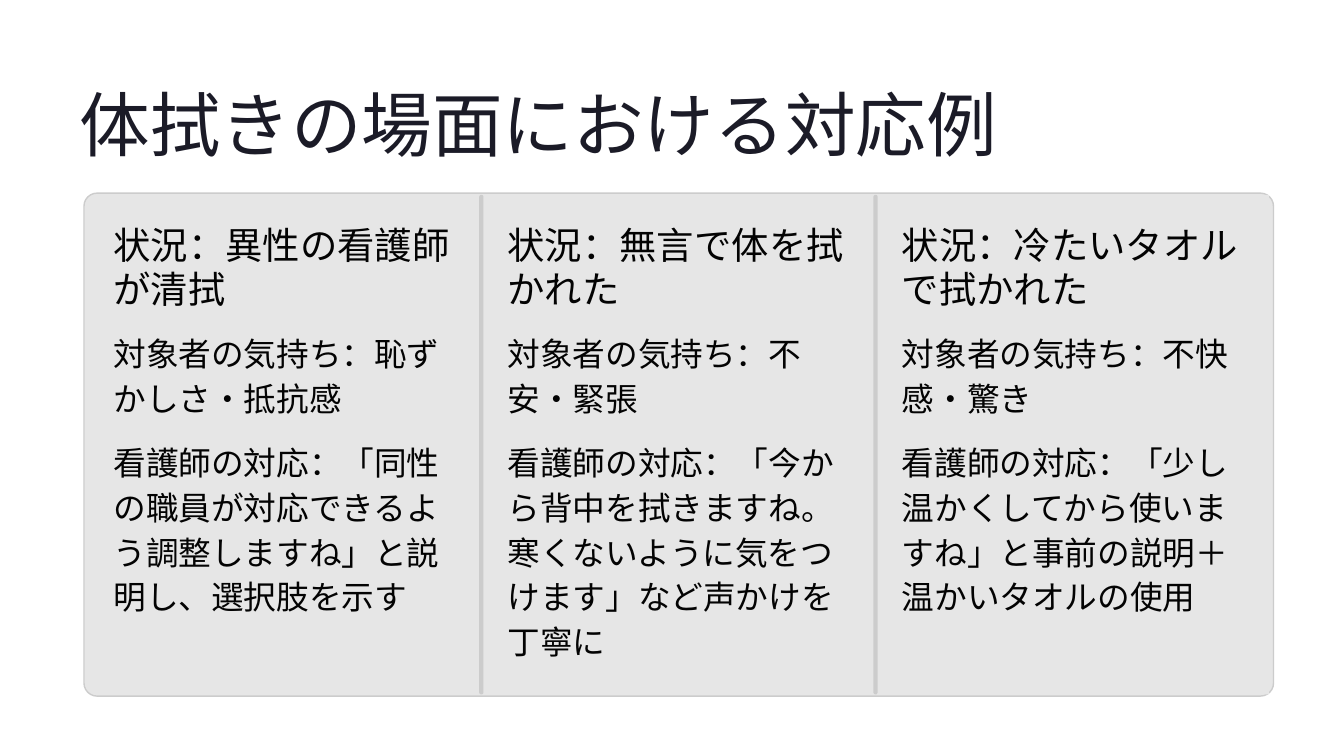
from dataclasses import dataclass

from pptx import Presentation
from pptx.dml.color import RGBColor
from pptx.enum.shapes import MSO_SHAPE
from pptx.enum.text import PP_ALIGN
from pptx.util import Cm, Pt

RECTANGLE = MSO_SHAPE.RECTANGLE
ROUNDED = MSO_SHAPE.ROUNDED_RECTANGLE
LEFT = PP_ALIGN.LEFT


@dataclass(frozen=True)
class Theme:
    title_color: RGBColor = RGBColor(0x1B, 0x1B, 0x27)
    text_color: RGBColor = RGBColor(0x03, 0x03, 0x03)
    card_color: RGBColor = RGBColor(0xE6, 0xE6, 0xE6)
    divider_color: RGBColor = RGBColor(0xCC, 0xCC, 0xCC)
    heading_font: str = "Inter"
    body_font: str = "Lato"
    title_size: Pt = Pt(60.5)
    heading_size: Pt = Pt(32)
    body_size: Pt = Pt(28)
    title_spacing: Pt = Pt(75.5)
    heading_spacing: Pt = Pt(37.5)
    body_spacing: Pt = Pt(38.5)


THEME = Theme()
TITLE_STYLE = {
    "font": {"name": THEME.heading_font, "size": THEME.title_size},
    "color": THEME.title_color,
    "paragraph": {"line_spacing": THEME.title_spacing, "alignment": LEFT},
}
HEADING_STYLE = {
    "font": {"name": THEME.heading_font, "size": THEME.heading_size},
    "color": THEME.text_color,
    "paragraph": {"line_spacing": THEME.heading_spacing, "alignment": LEFT},
}
BODY_STYLE = {
    "font": {"name": THEME.body_font, "size": THEME.body_size},
    "color": THEME.text_color,
    "paragraph": {"line_spacing": THEME.body_spacing, "alignment": LEFT},
}

# Lengths in centimetres
COLUMN_LEFT, COLUMN_PITCH, COLUMN_WIDTH = 2.57, 11.92, 11.96
COLUMN_TOP, COLUMN_HEIGHT = 5.89, 15.11
TEXT_INDENT, TEXT_WIDTH = 0.86, 10.24
DIVIDER_WIDTH = 0.13
# Top, height and style of the situation, the feeling and the response
TEXT_ROWS = [
    (6.76, 2.97, HEADING_STYLE),
    (9.93, 3.05, BODY_STYLE),
    (13.21, 6.07, BODY_STYLE),
]
CASES = [
    (
        "状況：異性の看護師が清拭",
        "対象者の気持ち：恥ずかしさ・抵抗感",
        "看護師の対応：「同性の職員が対応できるよう調整しますね」と説明し、選択肢を示す",
    ),
    (
        "状況：無言で体を拭かれた",
        "対象者の気持ち：不安・緊張",
        "看護師の対応：「今から背中を拭きますね。寒くないように気をつけます」など声かけを丁寧に",
    ),
    (
        "状況：冷たいタオルで拭かれた",
        "対象者の気持ち：不快感・驚き",
        "看護師の対応：「少し温かくしてから使いますね」と事前の説明＋温かいタオルの使用",
    ),
]


def apply_format(target, values):
    for name, value in values.items():
        setattr(target, name, value)


def add_text(slide, box, text, style, wrap=True):
    frame = slide.shapes.add_textbox(*map(Cm, box)).text_frame
    apply_format(frame, {
        "word_wrap": wrap,
        "margin_left": 0,
        "margin_top": 0,
        "margin_right": 0,
        "margin_bottom": 0,
    })
    paragraph = frame.paragraphs[0]
    apply_format(paragraph, style["paragraph"])
    run = paragraph.add_run()
    run.text = text
    apply_format(run.font, style["font"])
    run.font.color.rgb = style["color"]


def add_panel(slide, box, color, corner=None, outline=None):
    """Add a filled box; corner is the rounding ratio, None means square."""
    kind = RECTANGLE if corner is None else ROUNDED
    shape = slide.shapes.add_shape(kind, *map(Cm, box))
    shape.shadow.inherit = False
    if corner is not None:
        shape.adjustments[0] = corner
    shape.fill.solid()
    shape.fill.fore_color.rgb = color
    if outline is None:
        shape.line.fill.background()
    else:
        shape.line.color.rgb = outline
        shape.line.width = Pt(1.2)


def add_case(slide, index, texts):
    left = COLUMN_LEFT + index * COLUMN_PITCH
    add_panel(slide, (left, COLUMN_TOP, COLUMN_WIDTH, COLUMN_HEIGHT),
              THEME.card_color, corner=None if index else 0.03)
    if index:
        add_panel(slide, (left, COLUMN_TOP, DIVIDER_WIDTH, COLUMN_HEIGHT),
                  THEME.divider_color, corner=0.5)
    for text, (top, height, style) in zip(texts, TEXT_ROWS):
        add_text(slide, (left + TEXT_INDENT, top, TEXT_WIDTH, height), text, style)


def main():
    presentation = Presentation()
    presentation.slide_width = Cm(40.64)
    presentation.slide_height = Cm(22.86)
    slide = presentation.slides.add_slide(presentation.slide_layouts[6])

    add_text(slide, (2.41, 2.36, 27.86, 2.67), "体拭きの場面における対応例",
             TITLE_STYLE, wrap=False)
    add_panel(slide, (2.54, 5.84, 35.97, 15.21), THEME.card_color,
              corner=0.026, outline=THEME.divider_color)
    for index, texts in enumerate(CASES):
        add_case(slide, index, texts)

    presentation.save("out.pptx")


if __name__ == "__main__":
    main()
